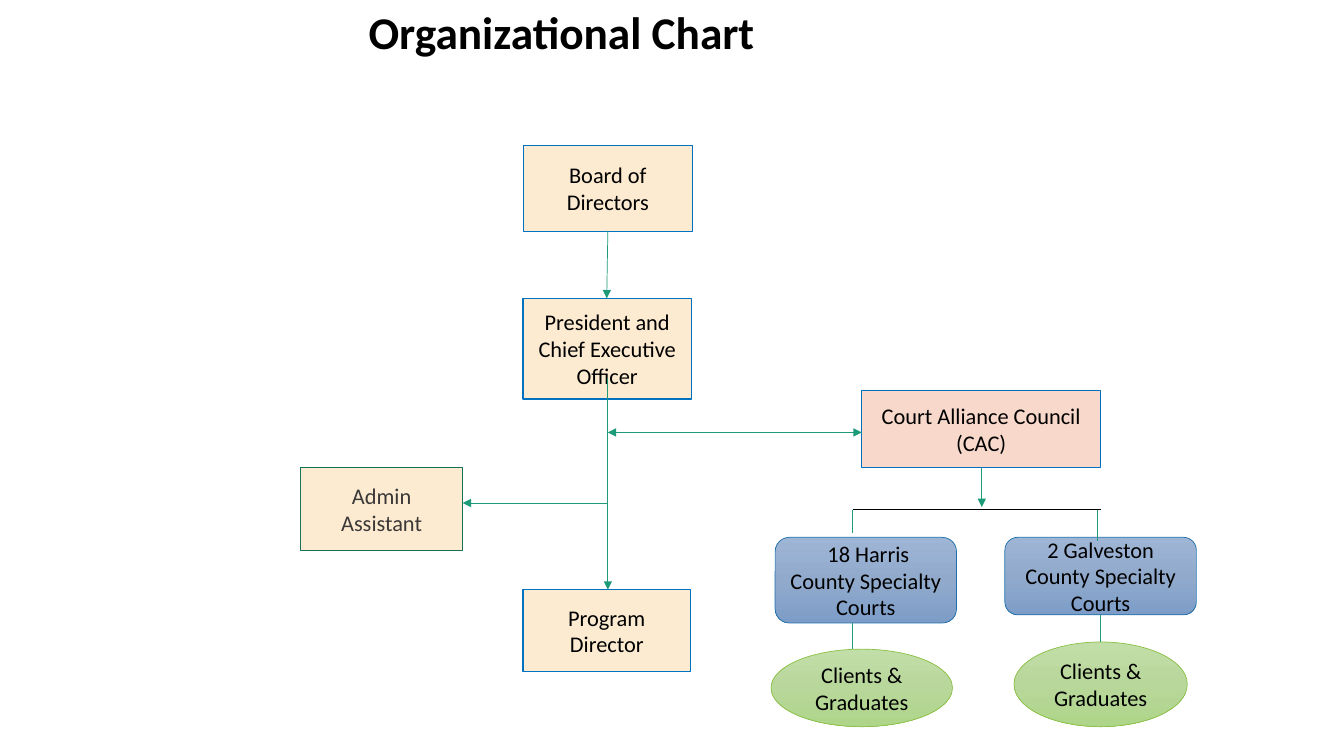
from copy import deepcopy
from dataclasses import dataclass, field

from lxml import etree
from pptx import Presentation
from pptx.dml.color import RGBColor
from pptx.enum import shapes as kinds, text as txt
from pptx.oxml import ns
from pptx.util import Pt

KIND = kinds.MSO_SHAPE


@dataclass(frozen=True)
class Theme:
    font: str = "Calibri"
    head: float = 32.4
    body: float = 16
    thin: float = 0.5
    bold: float = 1
    ink: str = "000000"
    soft: str = "3B3838"
    cream: tuple = ("FCEBD1",)
    peach: tuple = ("F8D8CA",)
    blue: tuple = ("9EB5D6", "91AACC", "7D9DC8")
    lime: tuple = ("C2DEA8", "B8D79B", "AED588")
    edge: str = "0070C0"
    navy: str = "1D6FA9"
    pine: str = "157259"
    leaf: str = "8BC145"
    teal: str = "1D9A78"


THEME = Theme()


@dataclass(frozen=True)
class Look:
    kind: KIND
    fill: tuple
    edge: str
    width: float = THEME.thin
    ink: str = THEME.ink


@dataclass(frozen=True)
class Node:
    label: str
    box: tuple
    look: Look


@dataclass(frozen=True)
class Link:
    start: tuple
    end: tuple
    ends: tuple = field(default=())
    color: str = THEME.teal


BOARD = Look(KIND.RECTANGLE, THEME.cream, THEME.edge)
STAFF = Look(KIND.RECTANGLE, THEME.cream, THEME.edge, THEME.bold)
ADMIN = Look(KIND.RECTANGLE, THEME.cream, THEME.pine, THEME.bold, THEME.soft)
ALLY = Look(KIND.RECTANGLE, THEME.peach, THEME.edge)
COURT = Look(KIND.ROUNDED_RECTANGLE, THEME.blue, THEME.navy)
GROUP = Look(KIND.OVAL, THEME.lime, THEME.leaf)

SPINE, LEFT, RIGHT, MID = 434.2, 609.1, 786.2, 701.3
TAIL = ("tailEnd",)
BOTH = ("headEnd", "tailEnd")

NODES = [
    Node("Board of Directors", (373.7, 103.7, 121, 61.9), BOARD),
    Node("President and Chief Executive Officer", (373.7, 213.1, 120.2, 72), STAFF),
    Node("Program Director", (373.7, 421.2, 119.5, 58.3), STAFF),
    Node("Court Alliance Council (CAC)", (615.6, 278.6, 170.6, 55.4), ALLY),
    Node(" 18 Harris County Specialty Courts", (553.7, 383.8, 129.6, 61.2), COURT),
    Node("2 Galveston County Specialty Courts", (717.8, 383.8, 136.8, 55.4), COURT),
    Node("Admin Assistant", (214.6, 334.1, 115.9, 59), ADMIN),
    Node("Clients & Graduates", (550.8, 463.7, 129.6, 55.4), GROUP),
    Node("Clients & Graduates", (724.3, 458.6, 123.8, 60.5), GROUP),
]

LINKS = [
    Link((SPINE, 164.9), (433.4, 213.1), TAIL),
    Link((SPINE, 270), (SPINE, 421.2), TAIL),
    Link((SPINE, 308.9), (615.6, 308.9), BOTH),
    Link((SPINE, 359.3), (330.5, 359.3), TAIL),
    Link((MID, 334.1), (MID, 362.2), TAIL),
    Link((RIGHT, 363.6), (LEFT, 363.6), color=THEME.ink),
    Link((LEFT, 364.3), (LEFT, 380.9)),
    Link((784.1, 364.3), (784.1, 386.6)),
    Link((LEFT, 445), (LEFT, 463.7)),
    Link((RIGHT, 439.2), (RIGHT, 458.6)),
]


def apply(item, form: dict) -> None:
    for name, value in form.items():
        setattr(item, name, value)


def write(shape, label: str, size: float, ink: str, bold: bool) -> None:
    frame = shape.text_frame
    frame.text = label
    apply(frame, {"word_wrap": True, "auto_size": txt.MSO_AUTO_SIZE.NONE,
                  "vertical_anchor": txt.MSO_ANCHOR.MIDDLE})
    para = frame.paragraphs[0]
    para.alignment = txt.PP_ALIGN.CENTER
    font = para.runs[0].font
    apply(font, {"name": THEME.font, "size": Pt(size), "bold": bold})
    font.color.rgb = RGBColor.from_string(ink)


def stroke(line, color: str, width: float) -> None:
    line.color.rgb = RGBColor.from_string(color)
    line.width = Pt(width)


def paint(shape, tones: tuple) -> None:
    if len(tones) == 1:
        shape.fill.solid()
        shape.fill.fore_color.rgb = RGBColor.from_string(tones[0])
        return
    shape.fill.gradient()
    shape.fill.gradient_angle = 270
    stops = shape.element.xpath(".//a:gsLst")[0]
    stops.insert(1, deepcopy(stops[0]))
    for rank, (stop, tone) in enumerate(zip(shape.fill.gradient_stops, tones)):
        stop.position = rank / (len(tones) - 1)
        stop.color.rgb = RGBColor.from_string(tone)


def add_node(slide, node: Node) -> None:
    look = node.look
    shape = slide.shapes.add_shape(look.kind, *map(Pt, node.box))
    shape.shadow.inherit = False
    paint(shape, look.fill)
    stroke(shape.line, look.edge, look.width)
    write(shape, node.label, THEME.body, look.ink, False)


def add_link(slide, link: Link) -> None:
    wire = slide.shapes.add_connector(
        kinds.MSO_CONNECTOR.STRAIGHT, *map(Pt, link.start + link.end))
    stroke(wire.line, link.color, THEME.thin)
    props = wire.element.spPr
    for end in link.ends:
        etree.SubElement(props.find(ns.qn("a:ln")), ns.qn(f"a:{end}"), type="triangle")
    etree.SubElement(props, ns.qn("a:effectLst"))


def add_title(slide, label: str) -> None:
    title = slide.shapes.title
    apply(title, {"left": Pt(0), "top": Pt(8.6),
                  "width": Pt(794.9), "height": Pt(32.4)})
    write(title, label, THEME.head, THEME.ink, True)
    title.text_frame.paragraphs[0].line_spacing = 0.9


def main() -> None:
    deck = Presentation()
    apply(deck, {"slide_width": Pt(960), "slide_height": Pt(540)})
    slide = deck.slides.add_slide(deck.slide_layouts[5])
    add_title(slide, " Organizational Chart")
    for node in NODES:
        add_node(slide, node)
    for link in LINKS:
        add_link(slide, link)
    deck.save("out.pptx")


if __name__ == "__main__":
    main()
